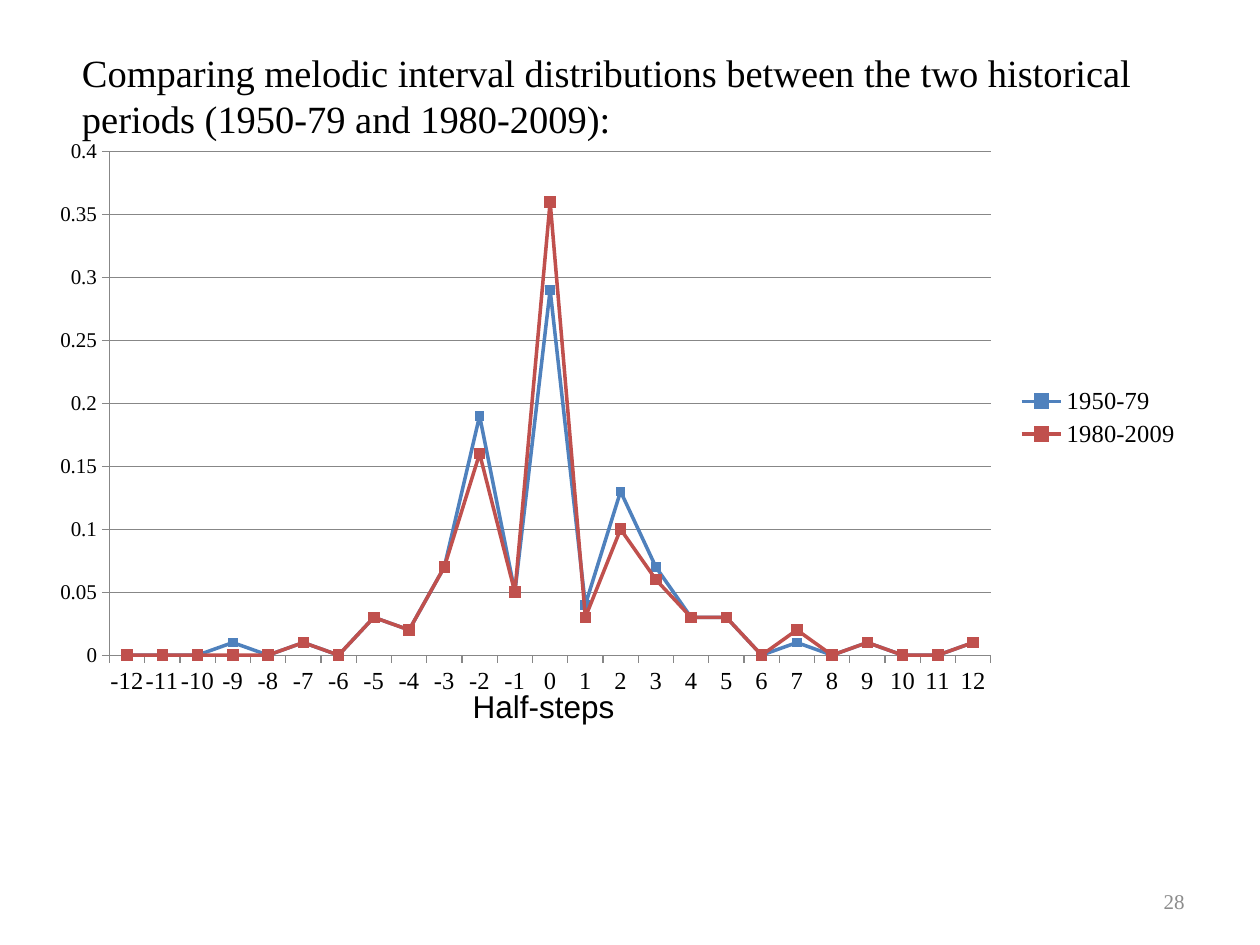
from lxml.etree import SubElement
from pptx import Presentation
from pptx.chart.data import CategoryChartData
from pptx.dml.color import RGBColor
from pptx.enum.chart import XL_CHART_TYPE, XL_LEGEND_POSITION, XL_MARKER_STYLE, XL_TICK_MARK
from pptx.enum.text import MSO_ANCHOR, PP_ALIGN
from pptx.oxml.ns import qn
from pptx.util import Pt

COLORS = {"text": "000000", "number": "8C8C8C", "grid": "878787",
          "early": "4F81BD", "late": "C0504D"}
SERIF = "Times New Roman"


def color(name):
    return RGBColor.from_string(COLORS[name])


def add_text(page, text, left, top, width, height, size, font=SERIF, shade="text", wrap=True):
    box = page.shapes.add_textbox(Pt(left), Pt(top), Pt(width), Pt(height))
    box.text_frame.word_wrap = wrap
    para = box.text_frame.paragraphs[0]
    para.text = text
    para.font.size = Pt(size)
    para.font.name = font
    para.font.color.rgb = color(shade)
    return box


deck = Presentation()
deck.slide_width, deck.slide_height = Pt(720), Pt(540)
page = deck.slides.add_slide(deck.slide_layouts[6])

add_text(page, "Comparing melodic interval distributions between the two historical "
         "periods (1950-79 and 1980-2009):", 39.8, 24.5, 648, 64, 22)

number = add_text(page, "28", 516.2, 500.4, 167.8, 28.8, 12, shade="number")
number.text_frame.vertical_anchor = MSO_ANCHOR.MIDDLE
number.text_frame.paragraphs[0].alignment = PP_ALIGN.RIGHT

# Share of melodic intervals by size in half-steps
early = [0, 0, 0, 0.01, 0, 0.01, 0, 0.03, 0.02, 0.07, 0.19, 0.05, 0.29,
         0.04, 0.13, 0.07, 0.03, 0.03, 0, 0.01, 0, 0.01, 0, 0, 0.01]
late = [0, 0, 0, 0, 0, 0.01, 0, 0.03, 0.02, 0.07, 0.16, 0.05, 0.36,
        0.03, 0.1, 0.06, 0.03, 0.03, 0, 0.02, 0, 0.01, 0, 0, 0.01]
data = CategoryChartData()
data.categories = [str(step) for step in range(-12, 13)]
data.add_series("1950-79", early)
data.add_series("1980-2009", late)
chart = page.shapes.add_chart(XL_CHART_TYPE.LINE_MARKERS, Pt(20.9), Pt(73.4),
                              Pt(661), Pt(330.5), data).chart
chart.has_title = False
chart.font.name = SERIF
chart.font.size = Pt(10)
chart.font.color.rgb = color("text")
chart.has_legend = True
chart.legend.position = XL_LEGEND_POSITION.RIGHT
chart.legend.include_in_layout = False
chart.legend.font.size = Pt(14)

plot = chart.plots[0]
plot.vary_by_categories = False
for series, shade, marker_size in zip(plot.series, ("early", "late"), (5, 6)):
    series.smooth = False
    series.format.line.width = Pt(2)
    series.format.line.color.rgb = color(shade)
    series.marker.style = XL_MARKER_STYLE.SQUARE
    series.marker.size = marker_size
    series.marker.format.fill.solid()
    series.marker.format.fill.fore_color.rgb = color(shade)
    series.marker.format.line.color.rgb = color(shade)

for axis, size in ((chart.category_axis, 14), (chart.value_axis, 12)):
    axis.tick_labels.font.size = Pt(size)
    axis.major_tick_mark = XL_TICK_MARK.OUTSIDE
    axis.format.line.color.rgb = color("grid")
    axis.format.line.width = Pt(0.75)
values = chart.value_axis
values.minimum_scale, values.maximum_scale, values.major_unit = 0, 0.4, 0.05
values.tick_labels.number_format = "General"
values.tick_labels.number_format_is_linked = False
values.has_major_gridlines = True
values.major_gridlines.format.line.color.rgb = color("grid")
values.major_gridlines.format.line.width = Pt(0.75)

# Fix the inner plot area as fractions of the chart
plot_area = chart.element.find(".//" + qn("c:plotArea"))
layout = plot_area.find(qn("c:layout"))
if layout is None:
    layout = SubElement(plot_area, qn("c:layout"))
    plot_area.insert(0, layout)
manual = SubElement(layout, qn("c:manualLayout"))
for tag, value in (("layoutTarget", "inner"), ("xMode", "edge"), ("yMode", "edge"),
                   ("x", "0.063"), ("y", "0.04"), ("w", "0.762"), ("h", "0.871")):
    SubElement(manual, qn("c:" + tag)).set("val", value)

add_text(page, "Half-steps", 263, 388.8, 96.5, 28.8, 18, font="Arial", wrap=False)

deck.save("out.pptx")
